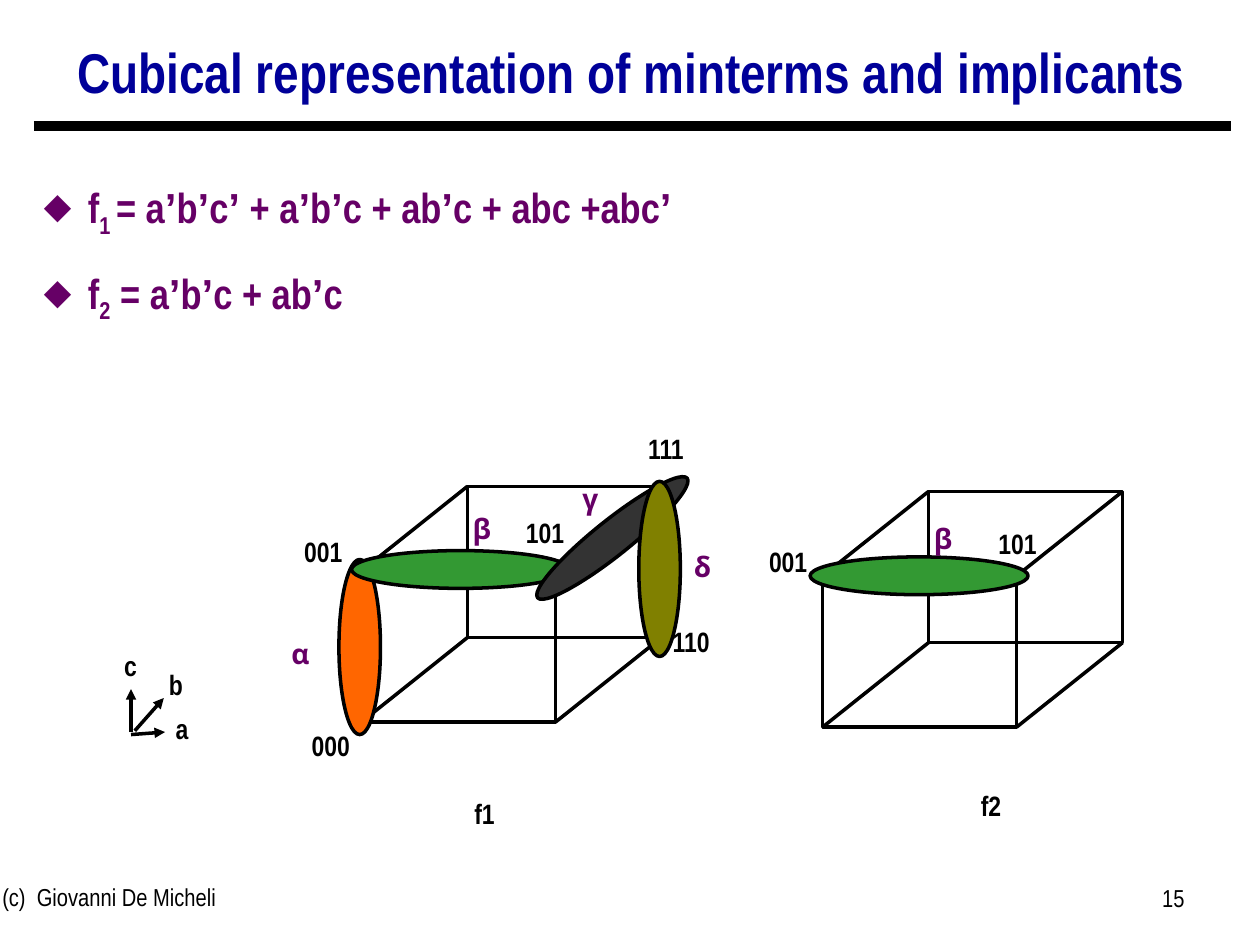
from lxml import etree
from pptx import Presentation
from pptx.dml.color import RGBColor
from pptx.enum.shapes import MSO_CONNECTOR, MSO_SHAPE
from pptx.enum.text import MSO_ANCHOR, MSO_AUTO_SIZE, PP_ALIGN
from pptx.oxml.ns import qn
from pptx.util import Inches, Pt

LEFT, MID, RIGHT = PP_ALIGN.LEFT, PP_ALIGN.CENTER, PP_ALIGN.RIGHT
OVAL, RECT = MSO_SHAPE.OVAL, MSO_SHAPE.RECTANGLE
NARROW, GREEK = "Arial Narrow", "Noto Sans"
BLACK, NAVY, PLUM, GREEN = "000000", "000099", "660066", "339933"

TITLE = "Cubical representation of minterms and implicants"
# subscript and right-hand side of each function
TERMS = [
    ("1 ", "= a’b’c’ + a’b’c + ab’c + abc +abc’"),
    ("2", " = a’b’c + ab’c"),
]
# text, left, top
LABELS = [
    ("111", 4.89, 3.38), ("000", 2.23, 5.73), ("001", 2.17, 4.19),
    ("110", 5.09, 4.91), ("101", 3.93, 4.04), ("f1", 3.45, 6.27),
    ("f2", 7.47, 6.21), ("001", 5.86, 4.27), ("101", 7.68, 4.13),
    ("c", 0.64, 5.1), ("b", 1.0, 5.25), ("a", 1.05, 5.6),
]
# start and end of each axis
AXES = [
    (1.07, 5.8, 1.3, 5.54), (1.04, 5.81, 1.04, 5.47), (1.04, 5.83, 1.31, 5.81),
]
# left and top of each front face; all cubes share size and depth
CUBES = [(2.87, 4.53), (6.53, 4.57)]
WIDE, HIGH = 1.54, 1.2
DX, DY = 0.84, -0.67
# name, left and top of name, oval box, rotation, fill
IMPLICANTS = [
    ("α", 2.21, 5.0, (2.69, 4.44, 0.33, 1.39), 0, "FF6600"),
    ("β", 3.65, 4.01, (2.79, 4.37, 1.73, 0.3), 0, GREEN),
    ("γ", 4.51, 3.77, (4.1, 4.13, 1.52, 0.28), 321.4, "333333"),
    ("δ", 5.4, 4.31, (5.07, 3.82, 0.33, 1.39), 0, "808000"),
    ("β", 7.31, 4.09, (6.43, 4.42, 1.73, 0.3), 0, GREEN),
]

deck = Presentation()
deck.slide_width, deck.slide_height = Inches(10), Inches(7.5)
slide = deck.slides.add_slide(deck.slide_layouts[5])
shapes = slide.shapes


def color(code):
    return RGBColor.from_string(code)


def add_run(para, words, size=16, font=NARROW, ink=BLACK, bold=True):
    run = para.add_run()
    run.text = words
    run.font.size, run.font.name = Pt(size), font
    run.font.bold, run.font.color.rgb = bold, color(ink)
    return run


def text(words, x, y, w=0.79, h=0.37, align=MID, wrap=True, **look):
    box = shapes.add_textbox(*map(Inches, (x, y, w, h)))
    box.text_frame.word_wrap = wrap
    para = box.text_frame.paragraphs[0]
    para.alignment = align
    if words:
        add_run(para, words, **look)
    return box.text_frame


def line(x1, y1, x2, y2, width=2, arrow=False):
    ends = map(Inches, (x1, y1, x2, y2))
    link = shapes.add_connector(MSO_CONNECTOR.STRAIGHT, *ends)
    link.line.width, link.line.color.rgb = Pt(width), color(BLACK)
    props = link._element.spPr
    if arrow:
        etree.SubElement(link.line._get_or_add_ln(), qn("a:tailEnd"), type="triangle")
    etree.SubElement(props, qn("a:effectLst"))


def shape(kind, box, fill=None, turn=0):
    item = shapes.add_shape(kind, *map(Inches, box))
    item.shadow.inherit = False
    item.rotation = turn
    item.line.width, item.line.color.rgb = Pt(2), color(BLACK)
    if fill:
        item.fill.solid()
        item.fill.fore_color.rgb = color(fill)
    else:
        item.fill.background()


def bullet(para, indent):
    """Give the paragraph a hanging diamond bullet."""
    props = para._p.get_or_add_pPr()
    props.set("marL", str(Inches(indent)))
    props.set("indent", str(-Inches(indent)))
    ink = etree.SubElement(props, qn("a:buClr"))
    etree.SubElement(ink, qn("a:srgbClr"), val=PLUM)
    etree.SubElement(props, qn("a:buSzPct"), val="85000")
    etree.SubElement(props, qn("a:buChar"), char="◆")


def cube(x, y):
    shape(RECT, (x + DX, y + DY, WIDE, HIGH))
    shape(RECT, (x, y, WIDE, HIGH))
    for cx in (x, x + WIDE):
        for cy in (y, y + HIGH):
            line(cx, cy, cx + DX, cy + DY)


line(0.27, 1, 9.77, 1, width=6)

title = shapes.title
title.left, title.top, title.width, title.height = map(Inches, (0.26, 0.22, 9.51, 0.75))
frame = title.text_frame
frame.auto_size, frame.word_wrap = MSO_AUTO_SIZE.NONE, True
frame.vertical_anchor = MSO_ANCHOR.MIDDLE
head = frame.paragraphs[0]
head.alignment, head.line_spacing = MID, 0.9
add_run(head, TITLE, size=32, ink=NAVY)

text("(c)  Giovanni De Micheli", -0.08, 6.95, 3.17, 0.52, LEFT, size=14, bold=False)
text("15", 7.17, 6.96, 2.33, 0.52, RIGHT, size=14, bold=False)

body = text("", 0.25, 1.28, 6.1, 1.5)
for i, (sub, terms) in enumerate(TERMS):
    para = body.add_paragraph() if i else body.paragraphs[0]
    para.alignment, para.line_spacing, para.space_before = LEFT, 1.25, Pt(8)
    bullet(para, 0.35)
    add_run(para, "f", size=24, ink=PLUM)
    low = add_run(para, sub, size=24, ink=PLUM)
    low.font._element.set("baseline", "-25000")
    for j, part in enumerate(terms.split("’")):
        if j:
            add_run(para, "’", size=24, font="Arial", ink=PLUM)
        if part:
            add_run(para, part, size=24, ink=PLUM)

for label in LABELS:
    text(*label)
for axis in AXES:
    line(*axis, arrow=True)
for corner in CUBES:
    cube(*corner)
for name, x, y, box, turn, fill in IMPLICANTS:
    shape(OVAL, box, fill, turn)
    text(name, x, y, w=0.35, wrap=False, font=GREEK, ink=PLUM)

deck.save("out.pptx")
